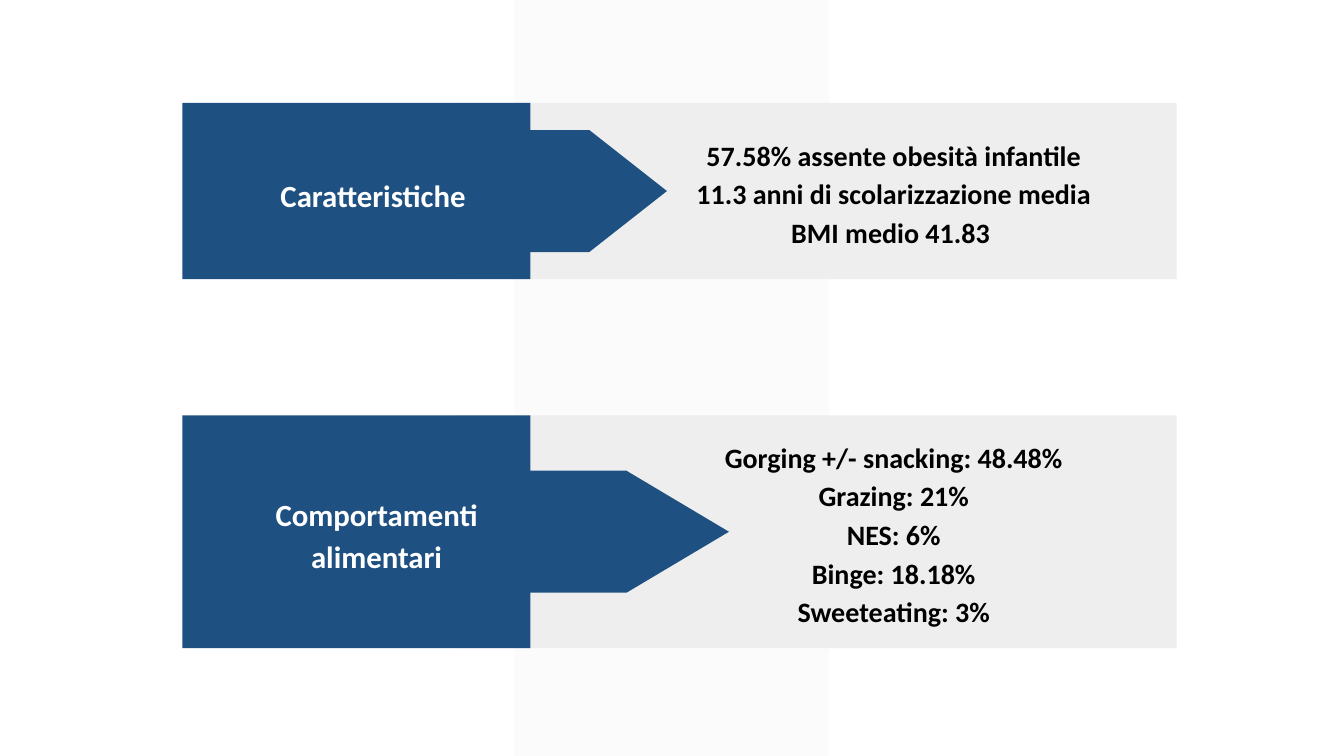
import pptx
import pptx.util
import pptx.dml.color
import pptx.enum.shapes
import pptx.enum.text
import pptx.oxml
import pptx.oxml.ns

Inches = pptx.util.Inches
Pt = pptx.util.Pt
MSO = pptx.enum.shapes.MSO_SHAPE

BLUE, PANEL, BAND = "1E5082", "EEEEEE", "F2F2F2"
WHITE, BLACK = "FFFFFF", "000000"
ARROW_CENTER = 4.69

# top, height, arrow length, label, label top, label height, detail lines
ROWS = [
    (1.02, 1.75, 3.85, "Caratteristiche ", 1.23, 1.35,
     ["57.58% assente obesità infantile",
      "11.3 anni di scolarizzazione media",
      "BMI medio 41.83 "]),
    (4.12, 2.31, 5.08, "Comportamenti alimentari", 4.39, 1.78,
     ["Gorging +/- snacking: 48.48%", "Grazing: 21%", "NES: 6%",
      "Binge: 18.18%", "Sweeteating: 3%"]),
]


def color(value):
    return pptx.dml.color.RGBColor.from_string(value)


def add_block(shapes, kind, left, top, width, height, fill):
    sp = shapes.add_shape(kind, Inches(left), Inches(top), Inches(width), Inches(height))
    sp.shadow.inherit = False
    sp.fill.solid()
    sp.fill.fore_color.rgb = color(fill)
    sp.line.fill.background()
    return sp


def add_band(shapes):
    sp = add_block(shapes, MSO.PARALLELOGRAM, 5.1, 0, 3.12, 7.5, BAND)
    sp.adjustments[0] = 0
    # 30% opacity
    srgb = sp.fill._xPr.find(".//" + pptx.oxml.ns.qn("a:srgbClr"))
    alpha = pptx.oxml.parse_xml(
        "<a:alpha %s val='30000'/>" % pptx.oxml.ns.nsdecls("a"))
    srgb.append(alpha)


def add_arrow(shapes, center_y, length):
    # The connector points down, so a 270 degree turn points it right
    width = 1.21
    sp = add_block(shapes, MSO.FLOWCHART_OFFPAGE_CONNECTOR, ARROW_CENTER - width / 2,
                   center_y - length / 2, width, length, BLUE)
    sp.rotation = 270


def add_text(shapes, left, top, width, height, lines, size, fill, indent=0):
    sp = shapes.add_textbox(Inches(left), Inches(top), Inches(width), Inches(height))
    tf = sp.text_frame
    tf.word_wrap = True
    tf.vertical_anchor = pptx.enum.text.MSO_ANCHOR.MIDDLE
    tf.margin_left = tf.margin_right = tf.margin_top = tf.margin_bottom = Inches(0.13)
    tf.text = "\n".join(lines)
    for p in tf.paragraphs:
        p.alignment = pptx.enum.text.PP_ALIGN.CENTER
        p.line_spacing = 1.15
        p.font.name = "Calibri"
        p.font.size = Pt(size)
        p.font.bold = True
        p.font.color.rgb = color(fill)
        if indent:
            pPr = p._p.get_or_add_pPr()
            pPr.set("marL", str(Inches(indent)))
            pPr.set("indent", "0")


def add_row(slide, top, height, arrow_length, label, label_top, label_height, details):
    shapes = slide.shapes.add_group_shape().shapes
    add_block(shapes, MSO.RECTANGLE, 4.51, top, 7.16, height, PANEL)
    add_block(shapes, MSO.RECTANGLE, 1.81, top, 3.45, height, BLUE)
    add_arrow(shapes, top + height / 2, arrow_length)
    add_text(shapes, 1.92, label_top, 3.63, label_height, [label], 22, WHITE)
    add_text(shapes, 5.75, top, 5.56, height, details, 20, BLACK, indent=0.67)


def main():
    prs = pptx.Presentation()
    prs.slide_width, prs.slide_height = Inches(13.33), Inches(7.5)
    slide = prs.slides.add_slide(prs.slide_layouts[6])

    # Background band
    add_band(slide.shapes)

    # Label, arrow and detail panel for each topic
    for row in ROWS:
        add_row(slide, *row)

    prs.save("out.pptx")


if __name__ == "__main__":
    main()
